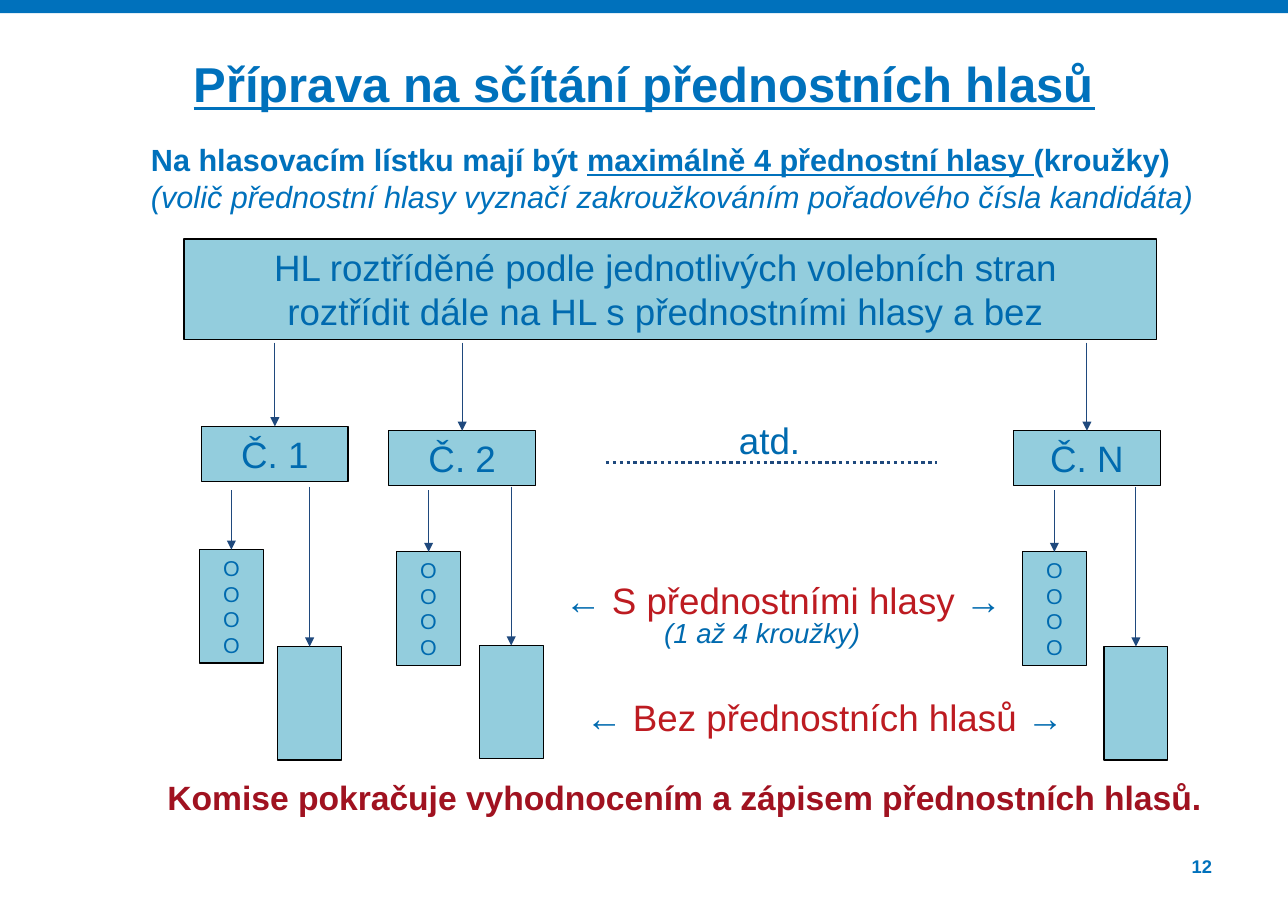
"""Build the slide on sorting ballots for the count of preferential votes."""
import lxml.etree
import pptx
import pptx.dml.color
import pptx.enum.dml
import pptx.enum.shapes
import pptx.enum.text
import pptx.oxml.ns
import pptx.util

THEME = {
    "font": "Arial",
    "blue": "0071BC", "text": "006AAF", "red": "BD1B21", "dark red": "A01220",
    "box": "93CDDD", "edge": "000000", "arrow": "1F497D",
    "title": 32, "label": 24, "closing": 22, "lead": 20, "note": 18, "circle": 14, "page": 12,
    "thin": 0.75, "dots": 2.25,
}
CELL = pptx.util.Inches(0.1)
COLUMNS, ROWS = 116.9, 82.7
ALIGN = pptx.enum.text.PP_ALIGN
ANCHOR = pptx.enum.text.MSO_ANCHOR
RECTANGLE = pptx.enum.shapes.MSO_SHAPE.RECTANGLE
qn = pptx.oxml.ns.qn

deck = pptx.Presentation()
deck.slide_width, deck.slide_height = int(COLUMNS * CELL), int(ROWS * CELL)
page = deck.slides.add_slide(deck.slide_layouts[6])


def add_box(cells, lines=(), size="label", align=ALIGN.CENTER, fill=None, inset=True, anchor=ANCHOR.TOP):
    """Place a box on the grid; each line is a list of (text, colour, styles) spans."""
    place = [int(cell * CELL) for cell in cells]
    if fill:
        box = page.shapes.add_shape(RECTANGLE, *place)
        box.shadow.inherit = False
        box.fill.solid()
        box.fill.fore_color.rgb = pptx.dml.color.RGBColor.from_string(THEME[fill])
        box.line.color.rgb = pptx.dml.color.RGBColor.from_string(THEME["edge"])
        box.line.width = pptx.util.Pt(THEME["thin"])
    else:
        box = page.shapes.add_textbox(*place)
    frame = box.text_frame
    frame.word_wrap = True
    frame.vertical_anchor = anchor
    if not inset:
        frame.margin_left = frame.margin_right = frame.margin_top = frame.margin_bottom = 0
    for index, spans in enumerate(lines):
        para = frame.paragraphs[0] if index == 0 else frame.add_paragraph()
        para.alignment = align
        for text, colour, styles in spans:
            span = para.add_run()
            span.text = text
            span.font.name = THEME["font"]
            span.font.size = pptx.util.Pt(THEME[size])
            span.font.color.rgb = pptx.dml.color.RGBColor.from_string(THEME[colour])
            span.font.bold = "b" in styles
            span.font.italic = "i" in styles
            span.font.underline = "u" in styles
    return box


def add_line(start, end, width="thin", target=None):
    """Draw a line on the grid, with an arrowhead if it is joined to a target's top."""
    ends = [int(cell * CELL) for cell in (*start, *end)]
    line = page.shapes.add_connector(pptx.enum.shapes.MSO_CONNECTOR.STRAIGHT, *ends)
    line.line.color.rgb = pptx.dml.color.RGBColor.from_string(THEME["arrow"])
    line.line.width = pptx.util.Pt(THEME[width])
    properties = line._element.spPr
    if target is not None:
        line.end_connect(target, 0)
        lxml.etree.SubElement(properties.find(qn("a:ln")), qn("a:tailEnd"), type="triangle")
    lxml.etree.SubElement(properties, qn("a:effectLst"))
    return line


band = add_box((0, 0, COLUMNS, 1.2), fill="blue")
band.line.fill.background()

add_box((8.1, 4.9, 100.8, 6.5), [[("Příprava na sčítání přednostních hlasů", "blue", "bu")]],
        "title", inset=False)
add_box((13.7, 12.8, 101, 7),
        [[("Na hlasovacím lístku mají být ", "blue", "b"),
          ("maximálně 4 přednostní hlasy ", "blue", "bu"),
          ("(kroužky)", "blue", "b")],
         [("(volič přednostní hlasy vyznačí zakroužkováním pořadového čísla kandidáta)", "blue", "i")]],
        "lead", ALIGN.LEFT, inset=False)
add_box((16.7, 21.7, 88.3, 9.1),
        [[("HL roztříděné podle jednotlivých volebních stran ", "text", "")],
         [("roztřídit dále na HL s přednostními hlasy a bez ", "text", "")]], fill="box")

PARTY_WIDTH, PARTY_HEIGHT = 13.3, 5
PILE_WIDTH, PILE_HEIGHT = 5.8, 10.3
parties = [
    ("Č. 1", (18.3, 38.7), (18.1, 49.9), (25.2, 58.7)),
    ("Č. 2", (35.3, 39.1), (36, 50.1), (43.5, 58.6)),
    ("Č. N", (92, 39.1), (92.8, 50.1), (100.2, 58.7)),
]
for name, party_at, circled_at, plain_at in parties:
    party = add_box((*party_at, PARTY_WIDTH, PARTY_HEIGHT), [[(name, "text", "")]], fill="box")
    circled = add_box((*circled_at, PILE_WIDTH, PILE_HEIGHT), [[("O", "text", "")]] * 4,
                      "circle", fill="box", anchor=ANCHOR.MIDDLE)
    plain = add_box((*plain_at, PILE_WIDTH, PILE_HEIGHT), fill="box")
    for target, (left, top), width, start_row in (
        (party, party_at, PARTY_WIDTH, 31.1),
        (circled, circled_at, PILE_WIDTH, 44.5),
        (plain, plain_at, PILE_WIDTH, 44.2),
    ):
        middle = left + width / 2
        add_line((middle, start_row), (middle, top), target=target)

add_box((64, 37.4, 11.7, 5), [[("atd.", "text", "")]])
dots = add_line((55, 42), (85, 42), "dots")
dots.line.dash_style = pptx.enum.dml.MSO_LINE.ROUND_DOT

for cells, caption in (((50.3, 52, 41.7, 5), "S přednostními hlasy "),
                       ((52.2, 62.6, 47.5, 5), "Bez přednostních hlasů ")):
    add_box(cells, [[("← ", "text", ""), (caption, "red", ""), ("→", "text", "")]], align=ALIGN.LEFT)
add_box((59.3, 55.4, 29.9, 4), [[("(1 až 4 kroužky)", "text", "i")]], "note", ALIGN.LEFT)

add_box((15.2, 70.5, 97.6, 5.5),
        [[("Komise pokračuje vyhodnocením a zápisem přednostních hlasů.", "dark red", "b")]],
        "closing", ALIGN.LEFT, inset=False)
add_box((102.2, 77.6, 7.8, 2.1), [[("12", "blue", "b")]], "page", ALIGN.RIGHT, inset=False)

deck.save("out.pptx")
